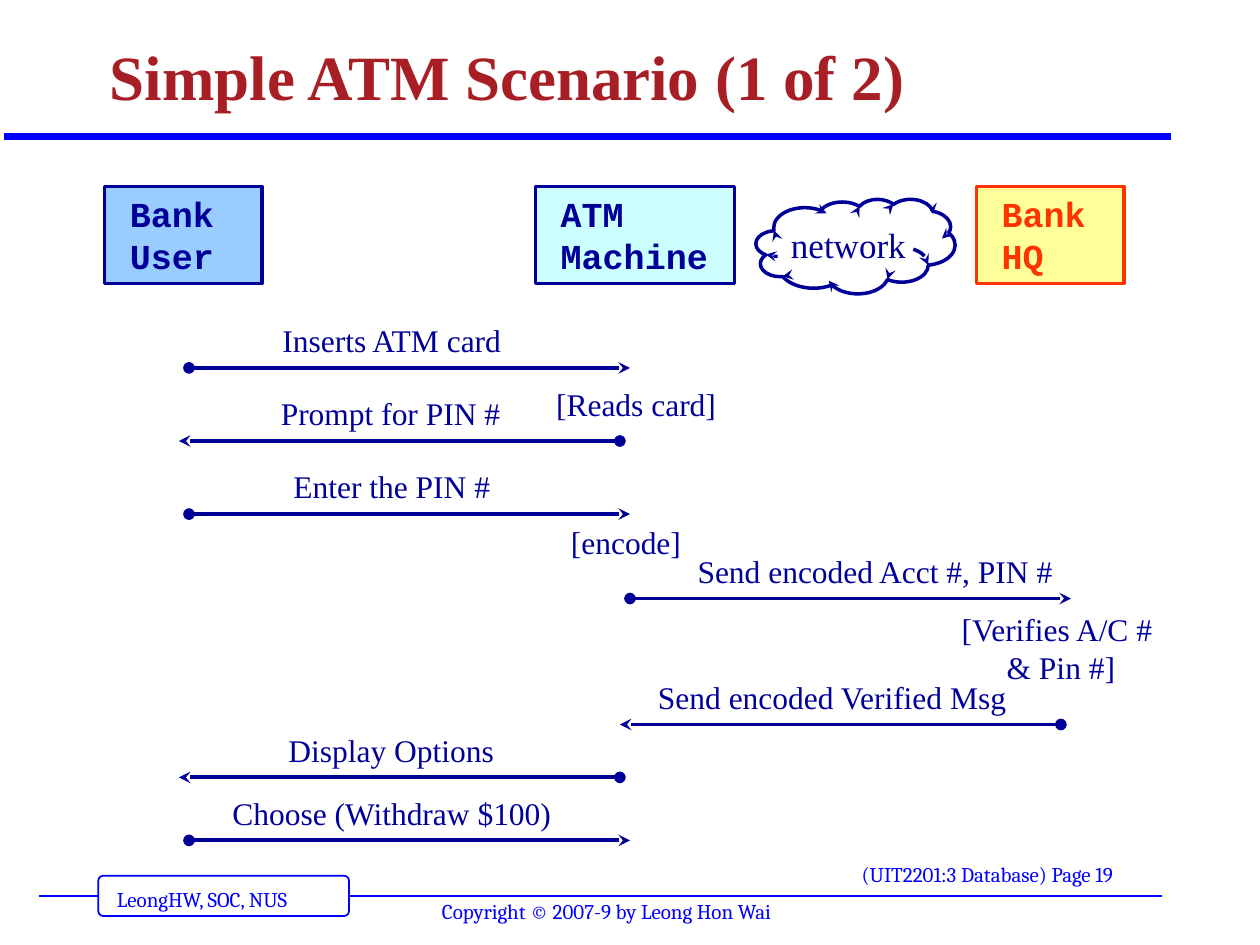
from lxml import etree
from pptx import Presentation
from pptx.dml.color import RGBColor
from pptx.enum.shapes import MSO_CONNECTOR, MSO_SHAPE
from pptx.enum.text import MSO_ANCHOR, PP_ALIGN
from pptx.oxml.ns import qn
from pptx.util import Inches, Pt

LEFT, CENTER = PP_ALIGN.LEFT, PP_ALIGN.CENTER
TOP, MIDDLE, BOTTOM = MSO_ANCHOR.TOP, MSO_ANCHOR.MIDDLE, MSO_ANCHOR.BOTTOM
SERIF, MONO, FOOTER_FONT = "Times New Roman", "Courier New", "Cambria"
COLORS = {
    "white": "FFFFFF", "blue": "0000FF", "navy": "000099", "red": "A81E25",
    "orange": "FF3300", "sky": "99CCFF", "aqua": "CCFFFF", "yellow": "FFFF99",
}

# Content
TITLE = "Simple ATM Scenario (1 of 2)"
RULES = [((0.31, 7.11), (9.22, 7.11), 1), ((0.03, 1.08), (9.29, 1.08), 4)]
FOOTERS = [  # text, left, top, width
    ("LeongHW, SOC, NUS", 0.83, 6.99, 1.82),
    ("(UIT2201:3 Database) Page 19", 6.74, 6.79, 2.42),
    ("Copyright © 2007-9 by Leong Hon Wai", 3.41, 7.08, 3.07),
]
ACTORS = [  # name, left, width, fill, line and text
    ("Bank\nUser", 0.83, 1.25, "sky", "navy"),
    ("ATM\nMachine", 4.25, 1.58, "aqua", "navy"),
    ("Bank\nHQ", 7.75, 1.17, "yellow", "orange"),
]
USER_TO_ATM, ATM_TO_USER = (1.5, 5), (4.92, 1.42)
ATM_TO_HQ, HQ_TO_ATM = (5, 8.5), (8.42, 4.92)
MESSAGES = [  # text, direction, arrow height on slide, label left, label width
    ("Inserts ATM card", USER_TO_ATM, 2.92, 2.13, 1.96),
    ("Prompt for PIN #", ATM_TO_USER, 3.5, 2.12, 1.96),
    ("Enter the PIN #", USER_TO_ATM, 4.08, 2.22, 1.78),
    ("Send encoded Acct #, PIN #", ATM_TO_HQ, 4.75, 5.42, 3.05),
    ("Send encoded Verified Msg", HQ_TO_ATM, 5.75, 5.11, 2.99),
    ("Display Options", ATM_TO_USER, 6.17, 2.18, 1.85),
    ("Choose (Withdraw $100)", USER_TO_ATM, 6.67, 1.73, 2.76),
]
LABEL_RISE = 0.42
ACTIONS = [  # text, left, top, height
    ("[Verifies A/C # \v& Pin #]", 7.42, 4.79, 0.71),
    ("[Reads card] ", 4.08, 3.01, 0.4),
    ("[encode] ", 4, 4.1, 0.4),
]


def rgb(name):
    return RGBColor.from_string(COLORS[name])


def write(shape, text, font, size, color, bold=False, align=LEFT,
          anchor=TOP, side=0.1, wrap=True):
    frame = shape.text_frame
    frame.text = text
    frame.word_wrap = wrap
    frame.vertical_anchor = anchor
    frame.margin_left = frame.margin_right = Inches(side)
    frame.margin_top = frame.margin_bottom = Inches(0.05)
    for paragraph in frame.paragraphs:
        paragraph.alignment = align
        for run in paragraph.runs:
            run.font.name, run.font.size = font, Pt(size)
            run.font.bold = bold
            run.font.color.rgb = rgb(color)


def add_text(slide, box, *args, **options):
    write(slide.shapes.add_textbox(*map(Inches, box)), *args, **options)


def add_box(slide, kind, box, fill, line, width):
    shape = slide.shapes.add_shape(kind, *map(Inches, box))
    shape.shadow.inherit = False
    if fill:
        shape.fill.solid()
        shape.fill.fore_color.rgb = rgb(fill)
    else:
        shape.fill.background()
    shape.line.color.rgb = rgb(line)
    shape.line.width = Pt(width)
    return shape


def add_line(slide, start, end, color, width):
    line = slide.shapes.add_connector(
        MSO_CONNECTOR.STRAIGHT, *map(Inches, (*start, *end)))
    line.line.color.rgb = rgb(color)
    line.line.width = Pt(width)
    etree.SubElement(line._element.spPr, qn("a:effectLst"))
    return line


def add_end(shape, end, kind):
    outline = shape.line._get_or_add_ln()
    etree.SubElement(outline, qn(f"a:{end}"), type=kind)


def main():
    presentation = Presentation()
    presentation.slide_width, presentation.slide_height = Inches(10), Inches(7.5)
    slide = presentation.slides.add_slide(presentation.slide_layouts[5])

    # Title
    title = slide.shapes.title
    title.left, title.top, title.width, title.height = map(
        Inches, (0.77, 0.08, 8.5, 0.88))
    write(title, TITLE, SERIF, 36, "red", bold=True, anchor=BOTTOM)
    title.text_frame.paragraphs[0].line_spacing = 0.9

    # Rules and footer
    for start, end, width in RULES:
        add_line(slide, start, end, "blue", width)
    tab = add_box(slide, MSO_SHAPE.ROUNDED_RECTANGLE, (0.78, 6.95, 1.99, 0.32),
                  "white", "blue", 1)
    tab.adjustments[0] = 0.125
    for text, left, top, width in FOOTERS:
        add_text(slide, (left, top, width, 0.3), text, FOOTER_FONT, 12, "blue",
                 wrap=False)

    # Actors
    for name, left, width, fill, color in ACTORS:
        actor = add_box(slide, MSO_SHAPE.RECTANGLE, (left, 1.48, width, 0.77),
                        fill, color, 2)
        write(actor, name, MONO, 20, color, bold=True, side=0.2)

    # Messages between actors
    for text, (start, end), y, left, width in MESSAGES:
        arrow = add_line(slide, (start, y), (end, y), "navy", 2.25)
        add_end(arrow, "headEnd", "oval")
        add_end(arrow, "tailEnd", "stealth")
        add_text(slide, (left, y - LABEL_RISE, width, 0.4), text, SERIF, 18,
                 "navy", align=CENTER, wrap=False)

    # Actions inside one actor
    for text, left, top, height in ACTIONS:
        add_text(slide, (left, top, 2, height), text, SERIF, 18, "navy",
                 align=CENTER)

    # Network cloud
    cloud = add_box(slide, MSO_SHAPE.CLOUD, (6, 1.58, 1.58, 0.75), None, "navy", 2)
    add_end(cloud, "tailEnd", "stealth")
    write(cloud, "network", SERIF, 20, "navy", align=CENTER, anchor=MIDDLE,
          side=0.05)

    presentation.save("out.pptx")


if __name__ == "__main__":
    main()
